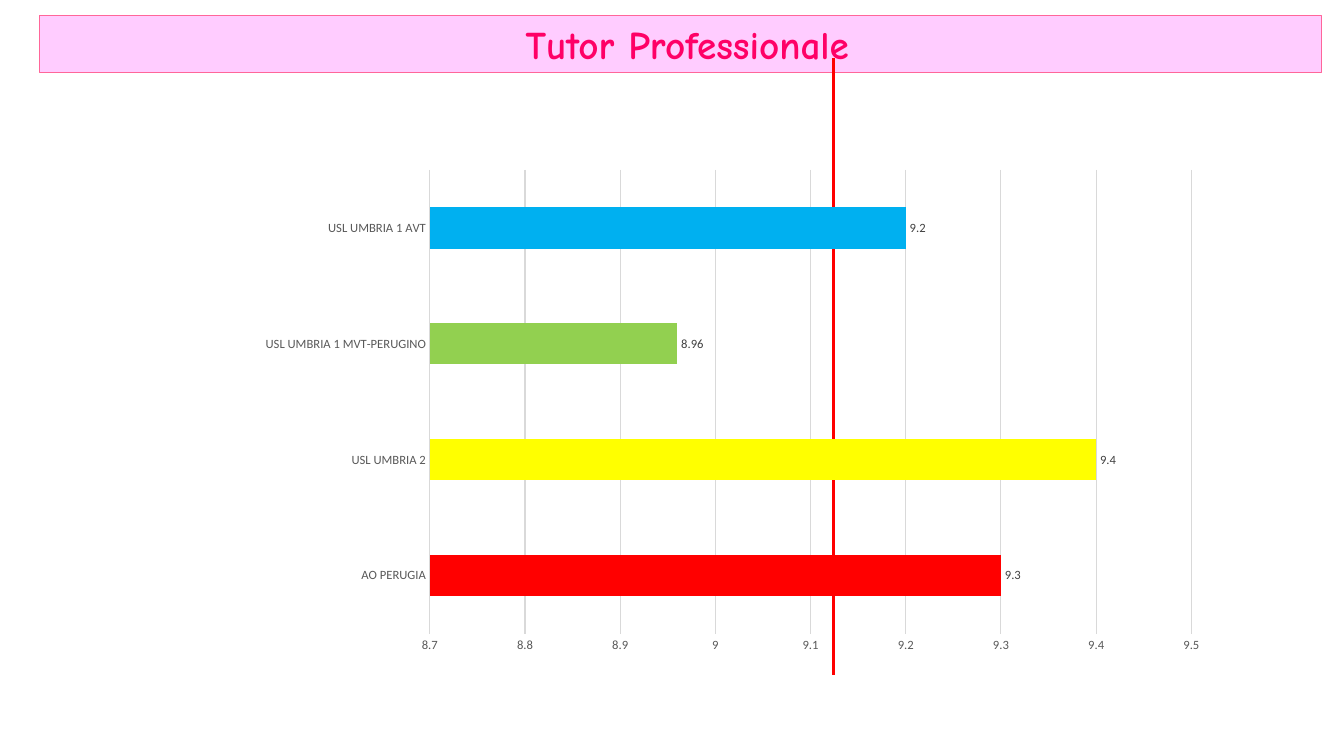
from lxml.etree import SubElement
from pptx import Presentation
from pptx.chart.data import CategoryChartData
from pptx.dml.color import RGBColor
from pptx.enum.chart import XL_CHART_TYPE, XL_LABEL_POSITION, XL_TICK_MARK
from pptx.enum.shapes import MSO_CONNECTOR
from pptx.enum.text import MSO_ANCHOR, PP_ALIGN
from pptx.oxml import parse_xml
from pptx.oxml.ns import nsdecls, qn
from pptx.util import Pt

BLACK = RGBColor(0x00, 0x00, 0x00)
RED = RGBColor(0xFF, 0x00, 0x00)
YELLOW = RGBColor(0xFF, 0xFF, 0x00)
GREEN = RGBColor(0x92, 0xD0, 0x50)
BLUE = RGBColor(0x00, 0xB0, 0xF0)
PALE_PINK = RGBColor(0xFF, 0xCC, 0xFF)
PINK = RGBColor(0xFF, 0x66, 0x99)
HOT_PINK = RGBColor(0xFF, 0x00, 0x66)
GRID_GRAY = RGBColor(0xD9, 0xD9, 0xD9)
AXIS_GRAY = RGBColor(0x59, 0x59, 0x59)
LABEL_GRAY = RGBColor(0x40, 0x40, 0x40)

# Content: score and bar colour of each site, from the bottom up
TITLE = " Tutor Professionale"
SCORES = [
    ("AO PERUGIA", 9.3, RED),
    ("USL UMBRIA 2", 9.4, YELLOW),
    ("USL UMBRIA 1 MVT-PERUGINO", 8.96, GREEN),
    ("USL UMBRIA 1 AVT", 9.2, BLUE),
]
SCALE = {"minimum_scale": 8.7, "maximum_scale": 9.5, "major_unit": 0.1}

# Places in points: left, top, width, height
TITLE_BOX = (28.1, 10.8, 915.8, 41)
CHART_BOX = (-24.5, 57.6, 915.8, 459.4)
PLOT_AREA = {"x": 0.36, "y": 0.14, "w": 0.59, "h": 0.72}
PLOT_AREA = {"x": 0.362, "y": 0.139, "w": 0.594, "h": 0.721}
MEAN_X, MEAN_TOP, MEAN_BOTTOM = 595.5, 41.8, 482.4


def set_font(font, face, size, color, bold=False):
    font.name, font.size, font.bold = face, Pt(size), bold
    font.color.rgb = color


def write(frame, text, face="Calibri", size=10, color=BLACK, bold=False,
          align=PP_ALIGN.CENTER):
    paragraph = frame.paragraphs[0]
    paragraph.alignment = align
    run = paragraph.add_run()
    run.text = text
    set_font(run.font, face, size, color, bold)


def set_line(line, color, width):
    line.color.rgb = color
    line.width = Pt(width)


deck = Presentation()
deck.slide_width, deck.slide_height = Pt(960), Pt(540)
slide = deck.slides.add_slide(deck.slide_layouts[5])

# Title band
title = slide.shapes.title
title.left, title.top, title.width, title.height = map(Pt, TITLE_BOX)
title.fill.solid()
title.fill.fore_color.rgb = PALE_PINK
set_line(title.line, PINK, 0.75)
title.text_frame.word_wrap = True
title.text_frame.vertical_anchor = MSO_ANCHOR.MIDDLE
write(title.text_frame, TITLE, face="Comic Neue", size=28, color=HOT_PINK, bold=True)

# Mean line, behind the bars
mean_line = slide.shapes.add_connector(
    MSO_CONNECTOR.STRAIGHT, Pt(MEAN_X), Pt(MEAN_TOP), Pt(MEAN_X), Pt(MEAN_BOTTOM))
set_line(mean_line.line, RED, 2.25)
SubElement(mean_line._element.spPr, qn("a:effectLst"))

# Score chart
scores = CategoryChartData()
scores.categories = [site for site, _, _ in SCORES]
scores.add_series("Series 1", [score for _, score, _ in SCORES])
chart = slide.shapes.add_chart(
    XL_CHART_TYPE.BAR_CLUSTERED, *map(Pt, CHART_BOX), scores).chart
chart.has_legend = chart.has_title = False
set_font(chart.font, "Calibri", 10, BLACK)

# Bars and value labels
plot = chart.plots[0]
plot.gap_width = 182
plot.vary_by_categories = False
bars = plot.series[0]
bars.format.fill.solid()
bars.format.fill.fore_color.rgb = BLUE
for index, (_, _, color) in enumerate(SCORES):
    fill = bars.points[index].format.fill
    fill.solid()
    fill.fore_color.rgb = color
labels = bars.data_labels
labels.show_value = True
labels.position = XL_LABEL_POSITION.OUTSIDE_END
set_font(labels.font, "Calibri", 9, LABEL_GRAY)

# Axes
site_axis, score_axis = chart.category_axis, chart.value_axis
for axis in (site_axis, score_axis):
    axis.major_tick_mark = axis.minor_tick_mark = XL_TICK_MARK.NONE
    set_font(axis.tick_labels.font, "Calibri", 9, AXIS_GRAY)
set_line(site_axis.format.line, GRID_GRAY, 0.75)
score_axis.format.line.fill.background()
for setting, value in SCALE.items():
    setattr(score_axis, setting, value)
score_axis.has_major_gridlines = True
set_line(score_axis.major_gridlines.format.line, GRID_GRAY, 0.75)

# Inner plot area, as fractions of the chart
edges = "".join(f'<c:{edge}Mode val="edge"/>' for edge in "xy")
sizes = "".join(f'<c:{key} val="{share}"/>' for key, share in PLOT_AREA.items())
plot_area = chart._chartSpace.chart.plotArea
for automatic in plot_area.findall(qn("c:layout")):
    plot_area.remove(automatic)
plot_area.insert(0, parse_xml(
    f'<c:layout {nsdecls("c")}><c:manualLayout><c:layoutTarget val="inner"/>'
    f'{edges}{sizes}</c:manualLayout></c:layout>'))

deck.save("out.pptx")
